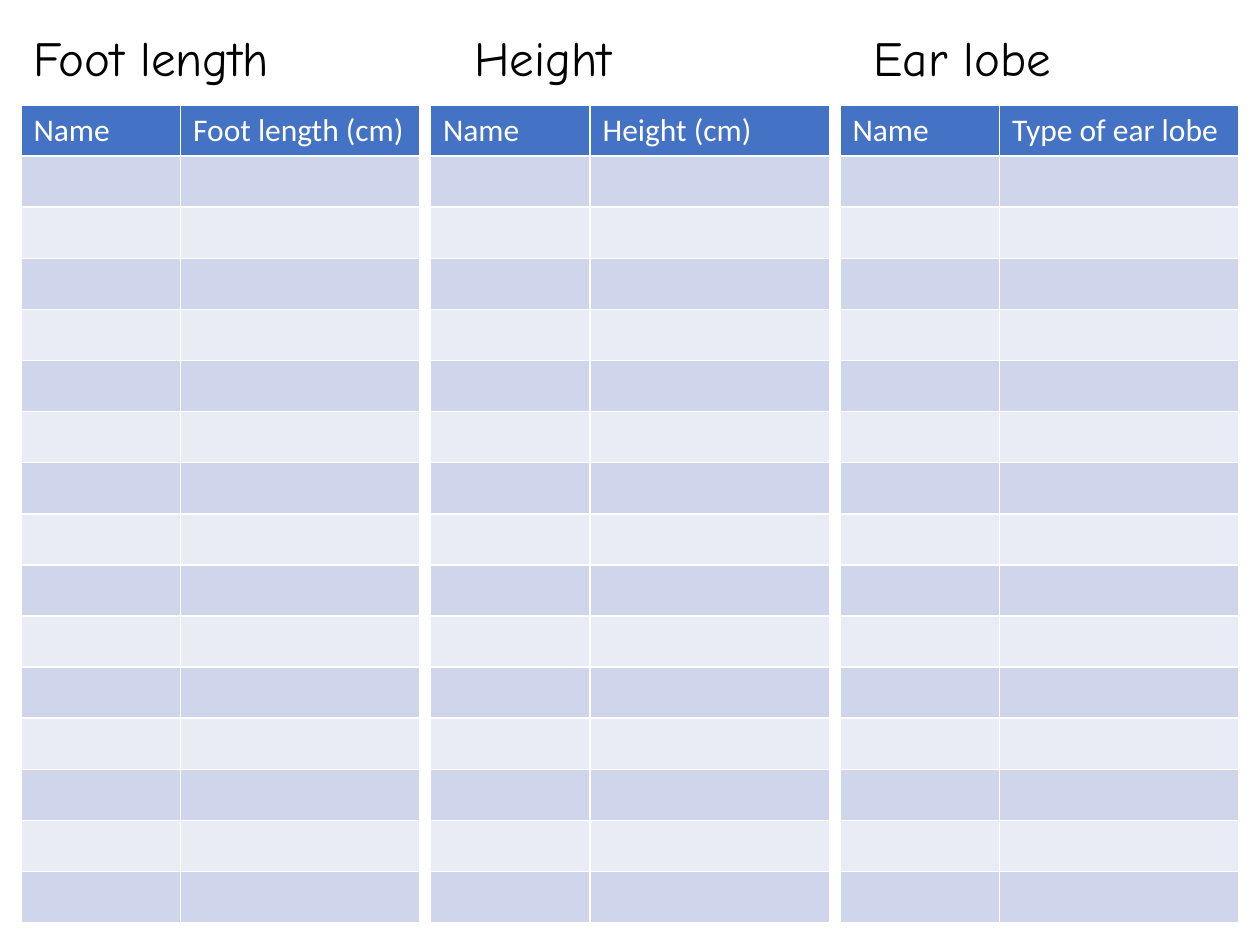
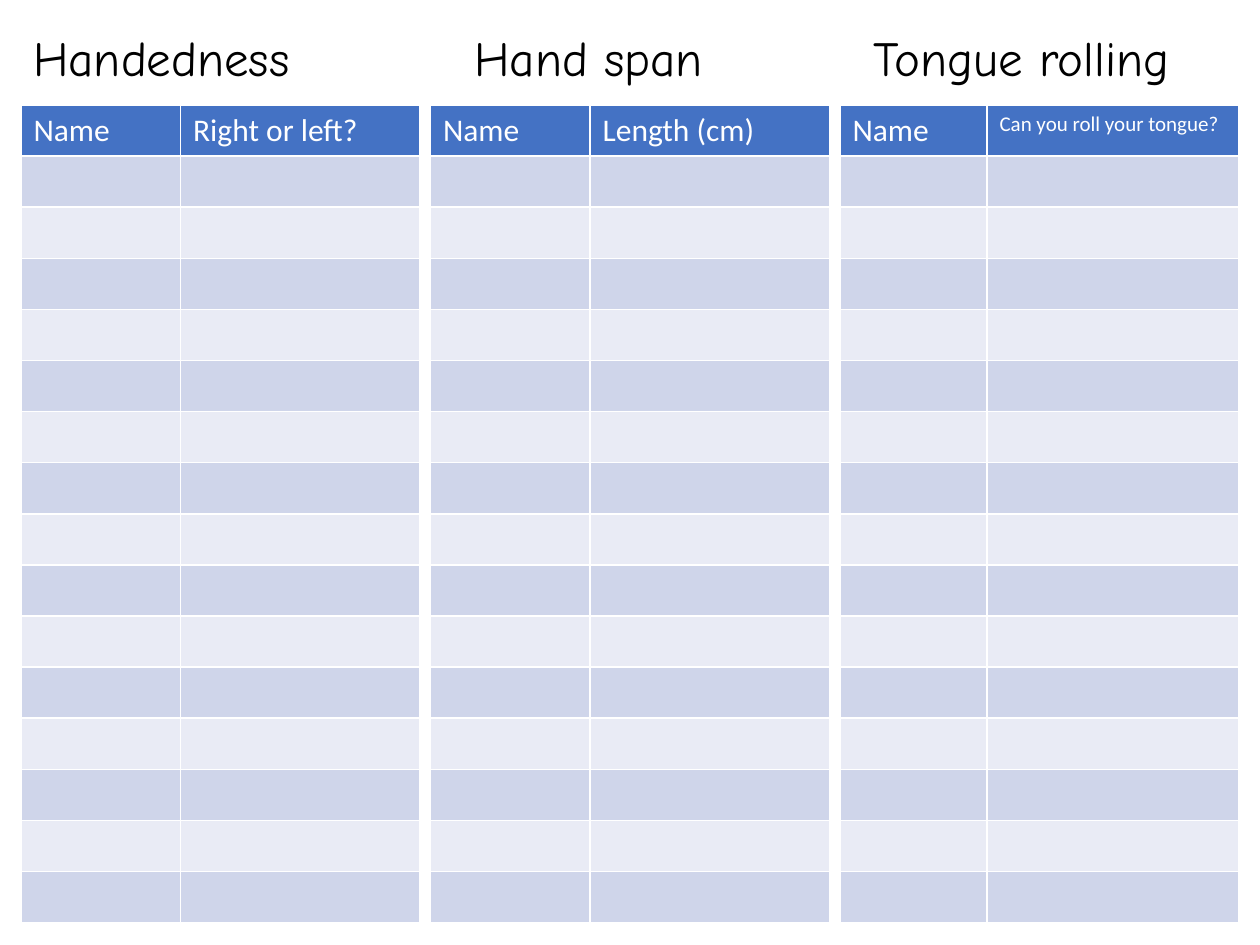
import pptx
import pptx.dml.color
import pptx.enum.text
import pptx.util

Pt = pptx.util.Pt
COLOURS = {"heading": "000000", "header": "4472C4", "header_text": "FFFFFF",
           "odd_row": "CFD5EA", "even_row": "E9EBF5"}
HEADING_FONT = "Comic Neue"
TABLE_FONT = "Calibri"
HEADING_LEFTS = [12, 264, 492]
TABLE_LEFT, TABLE_TOP, TABLE_WIDTH, TABLE_GAP = 12, 60, 228, 6
ROW_COUNT, ROW_HEIGHT = 16, 29.2

SURVEYS = [
    [("Foot length", 180, "Foot length (cm)", 18, 91.2),
     ("Height", 108, "Height (cm)", 18, 91.2),
     ("Ear lobe", 150, "Type of ear lobe", 18, 91.2)],
    [("Handedness", 180, "Right or left?", 18, 91.2),
     ("Hand span", 192, "Length (cm)", 18, 91.2),
     ("Tongue rolling", 216, "Can you roll your tongue?", 12, 84)],
]


def colour(name):
    return pptx.dml.color.RGBColor.from_string(COLOURS[name])


def add_text(para, text, font, size, colour_name):
    span = para.add_run()
    span.text = text
    span.font.name = font
    span.font.size = Pt(size)
    span.font.bold = False
    span.font.color.rgb = colour(colour_name)


deck = pptx.Presentation()
deck.slide_width = Pt(720)
deck.slide_height = Pt(540)
blank_layout = deck.slide_layouts.get_by_name("Blank")

for surveys in SURVEYS:
    page = deck.slides.add_slide(blank_layout)

    for left, (heading, width, *_) in zip(HEADING_LEFTS, surveys):
        box = page.shapes.add_textbox(Pt(left), Pt(12), Pt(width), Pt(41.2))
        box.text_frame.word_wrap = True
        box.text_frame.auto_size = pptx.enum.text.MSO_AUTO_SIZE.SHAPE_TO_FIT_TEXT
        add_text(box.text_frame.paragraphs[0], heading, HEADING_FONT, 28, "heading")

    for index, (_, _, question, question_size, name_width) in enumerate(surveys):
        left = TABLE_LEFT + index * (TABLE_WIDTH + TABLE_GAP)
        table = page.shapes.add_table(
            ROW_COUNT, 2, Pt(left), Pt(TABLE_TOP),
            Pt(TABLE_WIDTH), Pt(ROW_COUNT * ROW_HEIGHT)).table
        table.columns[0].width = Pt(name_width)
        table.columns[1].width = Pt(TABLE_WIDTH - name_width)

        for number, row in enumerate(table.rows):
            row.height = Pt(ROW_HEIGHT)
            fill_name = "header" if number == 0 else "odd_row" if number % 2 else "even_row"
            for cell in row.cells:
                cell.fill.solid()
                cell.fill.fore_color.rgb = colour(fill_name)

        for column, (label, size) in enumerate([("Name", 18), (question, question_size)]):
            para = table.cell(0, column).text_frame.paragraphs[0]
            add_text(para, label, TABLE_FONT, size, "header_text")

deck.save("out.pptx")
